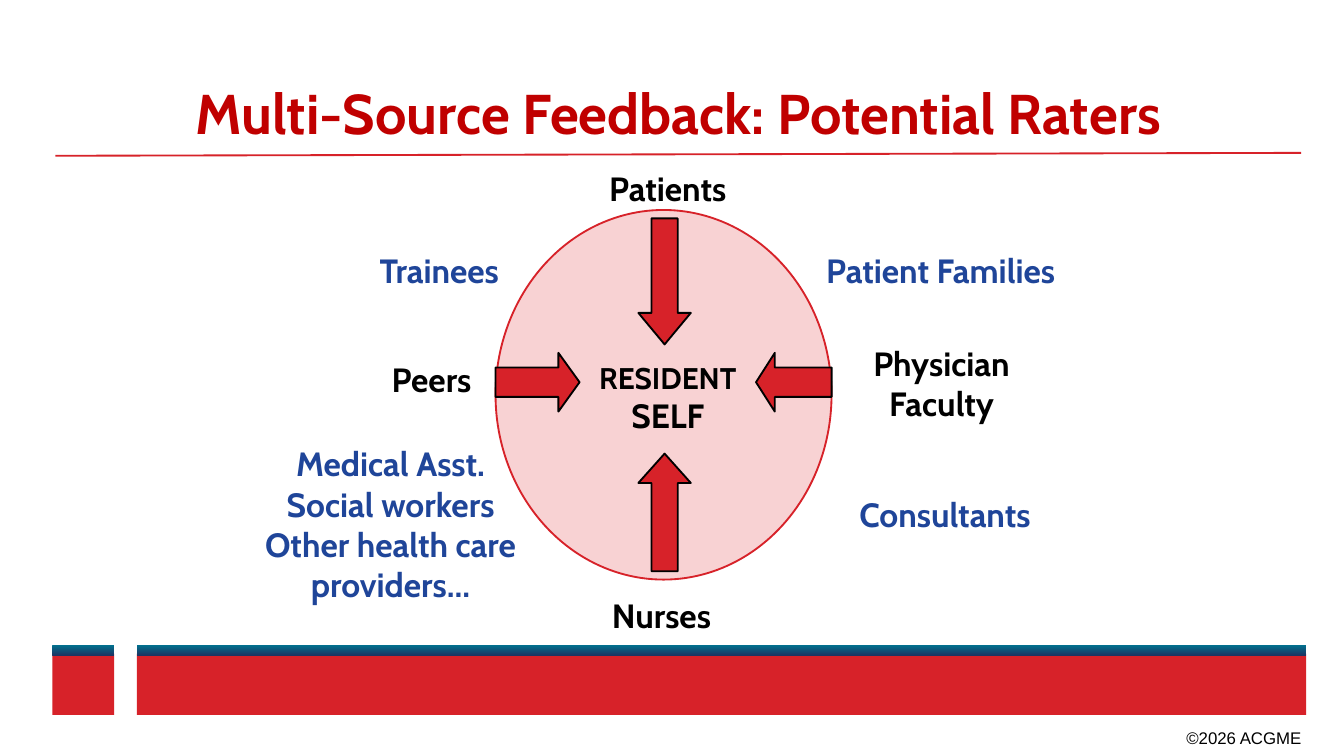
"""Build the multi-source feedback slide on a grid of 160 columns and 90 rows."""
from lxml.etree import SubElement
from pptx import Presentation
from pptx.dml.color import RGBColor
from pptx.enum.shapes import MSO_CONNECTOR, MSO_SHAPE as Kind
from pptx.enum.text import MSO_ANCHOR as Anchor, PP_ALIGN as Align
from pptx.oxml.ns import qn
from pptx.util import Inches, Pt

RED, PINK, BLUE, BLACK = "D72229", "F8D2D3", "1F4599", "000000"
hue = RGBColor.from_string

deck = Presentation()
deck.slide_width, deck.slide_height = Inches(10), Inches(5.625)
cell = deck.slide_width / 160
slide = deck.slides.add_slide(deck.slide_layouts[6])
shapes = slide.shapes


def draw(kind, grid, fill, line=None):
    form = shapes.add_shape(kind, *[round(n * cell) for n in grid])
    form.shadow.inherit = False
    form.fill.solid()
    form.fill.fore_color.rgb = hue(fill)
    if line:
        form.line.color.rgb = hue(line)
        form.line.width = Pt(1)
    else:
        form.line.fill.background()
    return form


def write(grid, lines, color=BLACK, align=Align.CENTER, size=18, face="Cabin"):
    box = shapes.add_textbox(*[round(n * cell) for n in grid])
    frame = box.text_frame
    frame.word_wrap = True
    frame.text = "\n".join(lines)
    for para in frame.paragraphs:
        para.alignment = align
        font = para.font
        font.name, font.size, font.bold = face, Pt(size), face == "Cabin"
        font.color.rgb = hue(color)
    return frame


for left, width in [(6.25, 7.35), (16.3, 139.2)]:
    draw(Kind.RECTANGLE, (left, 77.8, width, 7.3), RED)
    band = draw(Kind.RECTANGLE, (left, 76.8, width, 1.2), RED)
    band.fill.gradient()
    band.fill.gradient_angle = 270
    for stop, tone in zip(band.fill.gradient_stops, ["00728F", "1C3563"]):
        stop.color.rgb = hue(tone)

rule = shapes.add_connector(
    MSO_CONNECTOR.STRAIGHT, *[round(n * cell) for n in (6.6, 18.55, 154.9, 18.2)])
rule.line.color.rgb = hue(RED)
rule.line.width = Pt(1)
SubElement(rule._element.spPr, qn("a:effectLst"))

title = write((6.6, 2.6, 148.3, 15.5), ["Multi-Source Feedback: Potential Raters"],
              "C00000", size=30)
title.vertical_anchor = Anchor.BOTTOM
note = write((139.4, 85.8, 17.1, 4), ["©2026 ACGME"],
             align=Align.RIGHT, size=9, face="Arial")
note.word_wrap = False

draw(Kind.OVAL, (59, 25, 40, 44), PINK, RED)
for kind, grid, head in [
    (Kind.UP_ARROW, (76, 54, 6.25, 14), 0.56),
    (Kind.DOWN_ARROW, (76, 26, 6.25, 15), 0.6),
    (Kind.LEFT_ARROW, (90, 42, 9, 7), 0.32),
    (Kind.RIGHT_ARROW, (59, 42, 10, 7), 0.36),
]:
    arrow = draw(kind, grid, RED, BLACK)
    arrow.adjustments[0], arrow.adjustments[1] = 0.5, head

core = write((68, 42, 23, 10.7), ["RESIDENT", "SELF"])
core.paragraphs[0].font.size = Pt(16)
write((31, 42, 26.7, 6.4), ["Peers"], align=Align.RIGHT)

for grid, lines, color in [
    ((59.5, 19.2, 40, 6.4), ["Patients"], BLACK),
    ((96.5, 40, 31.2, 11.4), ["Physician Faculty"], BLACK),
    ((61, 70.1, 35.5, 6.4), ["Nurses"], BLACK),
    ((93.5, 29, 37, 6.4), ["Patient Families"], BLUE),
    ((27, 52, 39, 21), ["Medical Asst.", "Social workers",
                        "Other health care providers..."], BLUE),
    ((93.5, 58, 38, 6.4), ["Consultants"], BLUE),
    ((40.8, 29, 23, 6.4), ["Trainees"], BLUE),
]:
    write(grid, lines, color)

deck.save("out.pptx")
